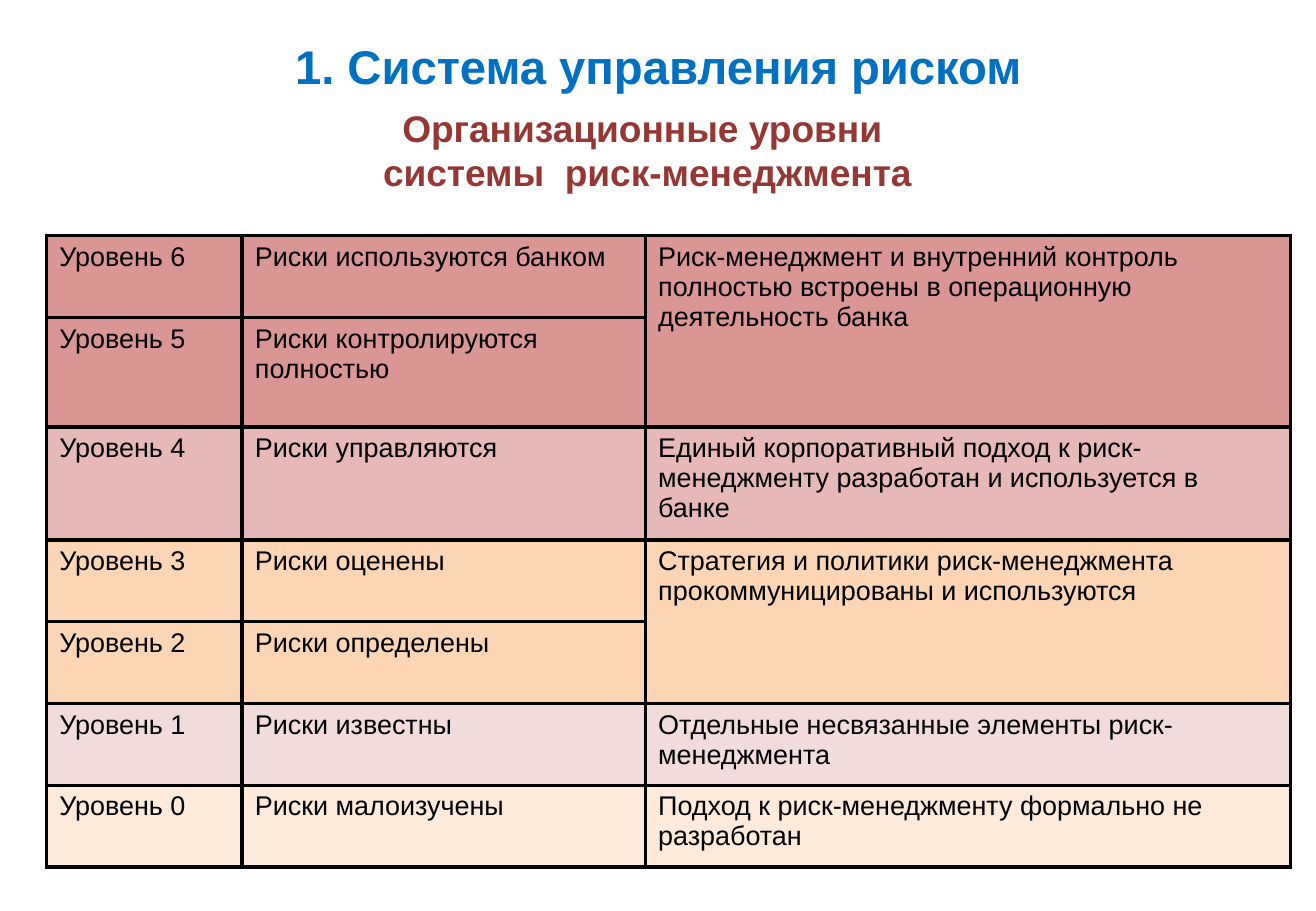
from lxml import etree
from pptx import Presentation
from pptx.dml.color import RGBColor
from pptx.enum import text
from pptx.oxml import ns
from pptx.util import Cm, Pt

COLORS = {
    "title": "0070C0", "subtitle": "953735", "black": "000000",
    "red": "D99694", "rose": "E6B9B8", "orange": "FCD5B5",
    "pink": "F2DCDB", "cream": "FDEADA",
}
# Level, risk status, organisational approach, fill; None joins the cell above
LEVELS = [
    ("Уровень 6", "Риски используются банком",
     "Риск-менеджмент и внутренний контроль полностью встроены "
     "в операционную деятельность банка", "red"),
    ("Уровень 5", "Риски контролируются полностью", None, "red"),
    ("Уровень 4", "Риски управляются",
     "Единый корпоративный подход к риск-менеджменту разработан "
     "и используется в банке", "rose"),
    ("Уровень 3", "Риски оценены",
     "Стратегия и политики риск-менеджмента прокоммуницированы "
     "и используются", "orange"),
    ("Уровень 2", "Риски определены", None, "orange"),
    ("Уровень 1", "Риски известны",
     "Отдельные несвязанные элементы риск-менеджмента", "pink"),
    ("Уровень 0", "Риски малоизучены",
     "Подход к риск-менеджменту формально не разработан", "cream"),
]
COL_WIDTHS = [4.09, 8.43, 13.49]
ROW_HEIGHTS = [1.71, 2.13, 2.36, 1.71, 1.71, 1.71, 1.71]


def format_runs(tf, size, color, bold=False):
    for p in tf.paragraphs:
        for r in p.runs:
            r.font.name = "Arial"
            r.font.size = Pt(size)
            r.font.bold = bold
            r.font.color.rgb = RGBColor.from_string(COLORS[color])


def add_borders(cell):
    """Draw black lines on all four sides, placed before the cell's fill."""
    tc_pr = cell._tc.get_or_add_tcPr()
    for i, side in enumerate(("lnL", "lnR", "lnT", "lnB")):
        ln = etree.Element(ns.qn(f"a:{side}"), w=str(Pt(2.25)))
        fill = etree.SubElement(ln, ns.qn("a:solidFill"))
        etree.SubElement(fill, ns.qn("a:srgbClr"), val=COLORS["black"])
        tc_pr.insert(i, ln)


prs = Presentation()
prs.slide_width, prs.slide_height = Cm(27.51), Cm(19.05)
s = prs.slides.add_slide(prs.slide_layouts[6])

# Headings
headings = [
    ("1. Система управления риском", 0.36, 0.38, 26.8, 28, "title"),
    ("Организационные уровни \vсистемы  риск-менеджмента",
     0.76, 2.13, 25.55, 22, "subtitle"),
]
for wording, left, top, width, size, color in headings:
    sp = s.shapes.add_textbox(Cm(left), Cm(top), Cm(width), Cm(2))
    tf = sp.text_frame
    tf.word_wrap = True
    tf.vertical_anchor = text.MSO_ANCHOR.MIDDLE
    tf.text = wording
    tf.paragraphs[0].alignment = text.PP_ALIGN.CENTER
    format_runs(tf, size, color, bold=True)

# Table of levels
table = s.shapes.add_table(
    len(LEVELS), len(COL_WIDTHS), Cm(0.97), Cm(4.93),
    Cm(sum(COL_WIDTHS)), Cm(sum(ROW_HEIGHTS))).table
table.first_row = table.horz_banding = False
for col, width in zip(table.columns, COL_WIDTHS):
    col.width = Cm(width)
for row, height in zip(table.rows, ROW_HEIGHTS):
    row.height = Cm(height)

for i, (*wordings, color) in enumerate(LEVELS):
    for j, wording in enumerate(wordings):
        cell = table.cell(i, j)
        cell.fill.solid()
        cell.fill.fore_color.rgb = RGBColor.from_string(COLORS[color])
        cell.margin_left = cell.margin_right = Cm(0.27)
        cell.margin_top = cell.margin_bottom = Cm(0.13)
        add_borders(cell)
        if wording is None:
            table.cell(i - 1, j).merge(cell)
        else:
            cell.text_frame.text = wording
            format_runs(cell.text_frame, 16, "black")

prs.save("out.pptx")
